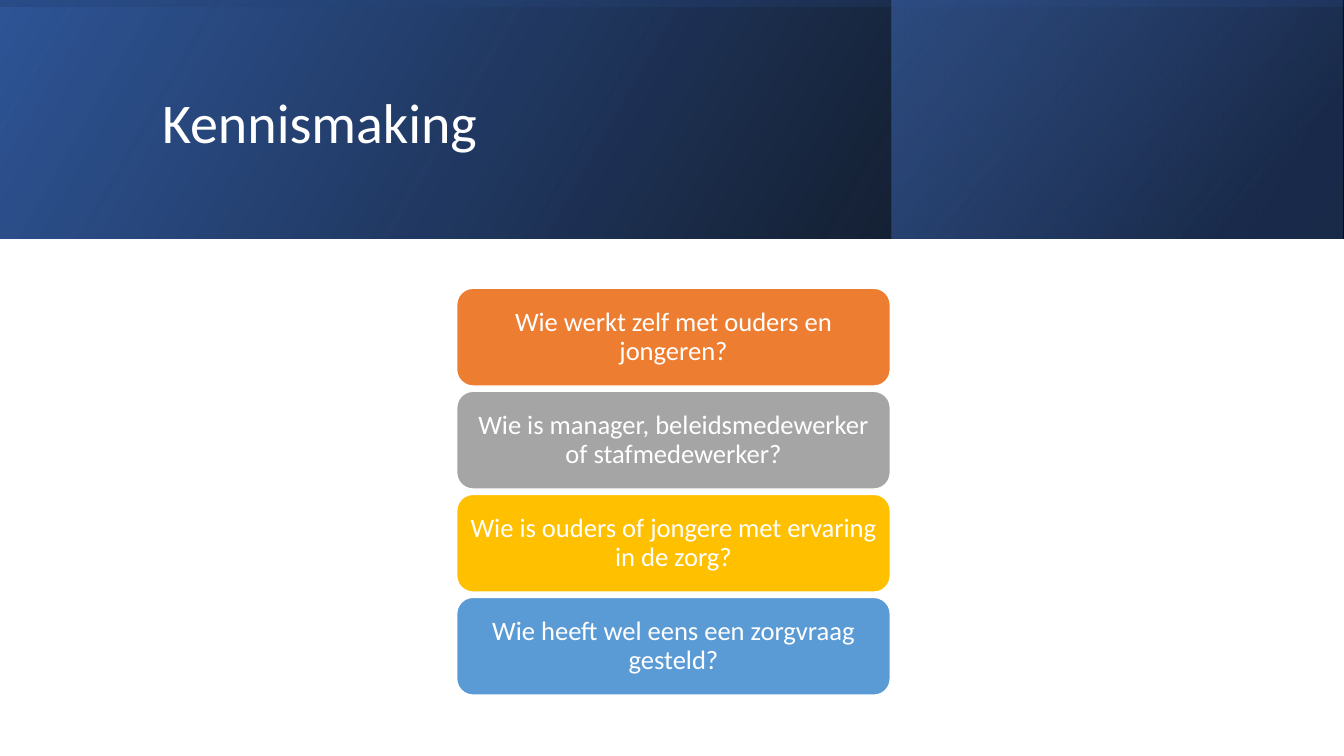
from dataclasses import dataclass

from lxml import etree
from pptx import Presentation
from pptx.dml.color import RGBColor
from pptx.enum.shapes import MSO_SHAPE
from pptx.enum.text import MSO_ANCHOR, PP_ALIGN
from pptx.oxml.ns import qn
from pptx.util import Emu, Inches, Pt

RECT = MSO_SHAPE.RECTANGLE
ROUND = MSO_SHAPE.ROUNDED_RECTANGLE
MIDDLE = MSO_ANCHOR.MIDDLE
LEFT, CENTER = PP_ALIGN.LEFT, PP_ALIGN.CENTER
FONT, WHITE = "Calibri", "FFFFFF"
WIDE, HIGH = Inches(13.33), Inches(7.5)


@dataclass
class Box:
    """A visible area, in percent of the slide's width and height."""
    x: float
    y: float
    w: float
    h: float

    def place(self) -> tuple[Emu, Emu, Emu, Emu]:
        return (Emu(int(WIDE * self.x / 100)), Emu(int(HIGH * self.y / 100)),
                Emu(int(WIDE * self.w / 100)), Emu(int(HIGH * self.h / 100)))


@dataclass
class Stop:
    at: int
    color: str
    alpha: int


@dataclass
class Band:
    box: Box
    stops: tuple[Stop, Stop]
    angle: int
    turn: int = 0


@dataclass
class Card:
    text: str
    color: str


HEAD = 31.6
BANDS = [
    Band(Box(0, 0, 100, HEAD),
         (Stop(0, "000000", 96), Stop(100, "2F5597", 100)), 330),
    Band(Box(66.32, 0, 33.6, HEAD),
         (Stop(19, "203864", 68), Stop(100, "4472C4", 48)), 320),
    Band(Box(0, 0, 100, HEAD),
         (Stop(23, "2F5597", 16), Stop(99, "000000", 45)), 350, turn=270),
]
TITLE = Box(11.33, 5.07, 79.75, 22.93)
CARDS = [
    Card("Wie werkt zelf met ouders en jongeren?", "ED7D31"),
    Card("Wie is manager, beleidsmedewerker of stafmedewerker?", "A5A5A5"),
    Card("Wie is ouders of jongere met ervaring in de zorg?", "FFC000"),
    Card("Wie heeft wel eens een zorgvraag gesteld?", "5B9BD5"),
]
FIRST = Box(33.98, 38.13, 32.26, 12.93)
PITCH = 13.63


def rgb(color: str) -> RGBColor:
    return RGBColor.from_string(color)


def write(shape, text: str, *, size: float, align=LEFT,
          inset: tuple[float, float] = (0.1, 0.05)) -> None:
    frame = shape.text_frame
    frame.word_wrap = True
    frame.vertical_anchor = MIDDLE
    frame.margin_left = frame.margin_right = Inches(inset[0])
    frame.margin_top = frame.margin_bottom = Inches(inset[1])
    para = frame.paragraphs[0]
    para.alignment = align
    para.line_spacing = 0.9
    run = para.add_run()
    run.text = text
    run.font.name = FONT
    run.font.size = Pt(size)
    run.font.color.rgb = rgb(WHITE)


def draw_band(slide, band: Band) -> None:
    """Draw a mirrored gradient band; a quarter turn swaps its sides."""
    x, y, w, h = band.box.place()
    if band.turn in (90, 270):
        x, y, w, h = x + (w - h) // 2, y + (h - w) // 2, h, w
    shape = slide.shapes.add_shape(RECT, x, y, w, h)
    shape.shadow.inherit = False
    shape.line.fill.background()
    shape.rotation = band.turn
    props = shape.element.spPr
    props.find(qn("a:xfrm")).set("flipH", "1")
    fill = shape.fill
    fill.gradient()
    fill.gradient_angle = 360 - band.angle
    for mark, stop in zip(fill.gradient_stops, band.stops):
        mark.position = stop.at / 100
        mark.color.rgb = rgb(stop.color)
    for node, stop in zip(props.iter(qn("a:srgbClr")), band.stops):
        alpha = etree.SubElement(node, qn("a:alpha"))
        alpha.set("val", str(stop.alpha * 1000))


def draw_card(slide, card: Card, row: int) -> None:
    box = Box(FIRST.x, FIRST.y + row * PITCH, FIRST.w, FIRST.h)
    shape = slide.shapes.add_shape(ROUND, *box.place())
    shape.shadow.inherit = False
    shape.fill.solid()
    shape.fill.fore_color.rgb = rgb(card.color)
    shape.line.color.rgb = rgb(WHITE)
    shape.line.width = Pt(1)
    write(shape, card.text, size=19, align=CENTER, inset=(0.08, 0.04))


def main() -> None:
    deck = Presentation()
    deck.slide_width, deck.slide_height = WIDE, HIGH
    slide = deck.slides.add_slide(deck.slide_layouts[6])
    for band in BANDS:
        draw_band(slide, band)
    write(slide.shapes.add_textbox(*TITLE.place()), "Kennismaking", size=40)
    for row, card in enumerate(CARDS):
        draw_card(slide, card, row)
    deck.save("out.pptx")


if __name__ == "__main__":
    main()
